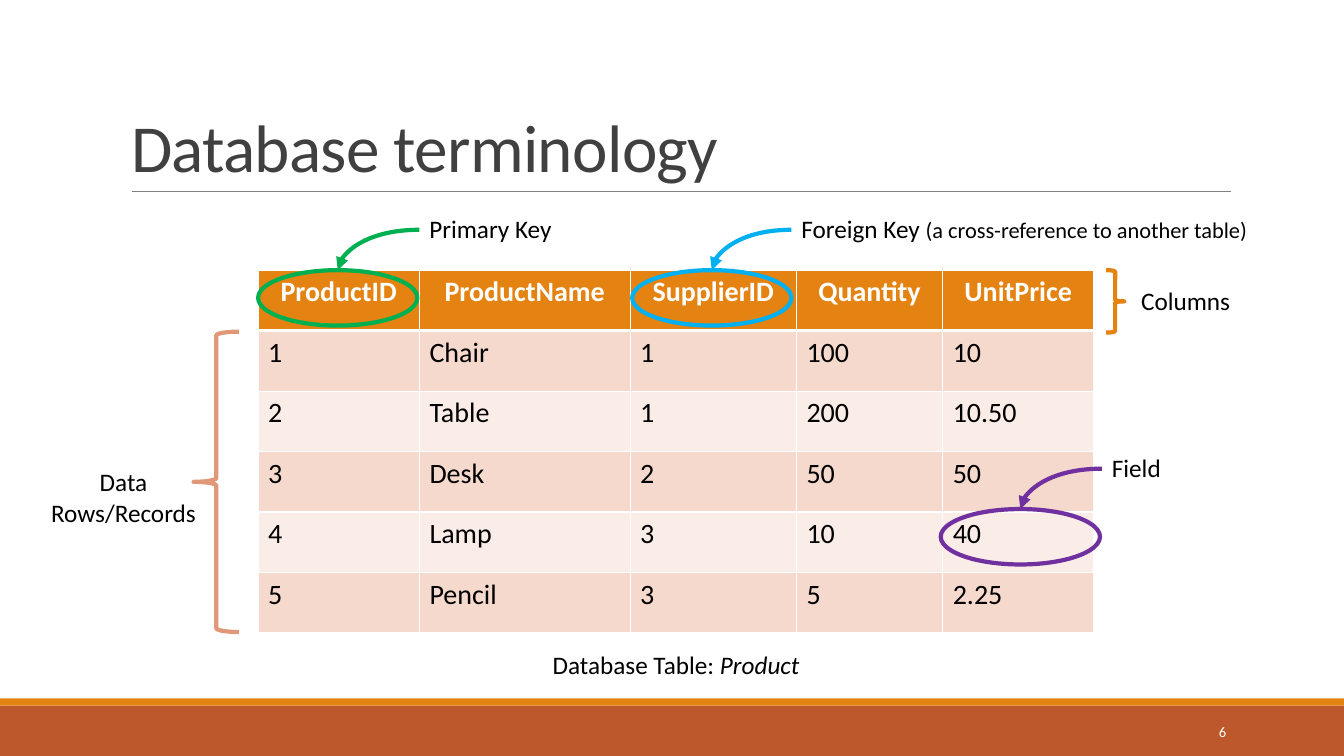
"""Builds the slide "Database terminology" with an annotated database table."""
from lxml import etree
from pptx import Presentation
from pptx.dml.color import RGBColor
from pptx.enum.shapes import MSO_CONNECTOR, MSO_SHAPE
from pptx.enum.text import MSO_ANCHOR, MSO_AUTO_SIZE, PP_ALIGN
from pptx.oxml.ns import qn
from pptx.util import Inches, Pt

RECT, OVAL = MSO_SHAPE.RECTANGLE, MSO_SHAPE.OVAL
LEFT_BRACE, RIGHT_BRACE = MSO_SHAPE.LEFT_BRACE, MSO_SHAPE.RIGHT_BRACE
STRAIGHT, CURVE = MSO_CONNECTOR.STRAIGHT, MSO_CONNECTOR.CURVE
LEFT, CENTER, RIGHT = PP_ALIGN.LEFT, PP_ALIGN.CENTER, PP_ALIGN.RIGHT
MIDDLE, BOTTOM = MSO_ANCHOR.MIDDLE, MSO_ANCHOR.BOTTOM
NO_AUTOFIT = MSO_AUTO_SIZE.NONE

FONT = "Calibri"
WHITE = RGBColor(0xFF, 0xFF, 0xFF)
BLACK = RGBColor(0x00, 0x00, 0x00)
DARK_GREY = RGBColor(0x40, 0x40, 0x40)
GREY = RGBColor(0x80, 0x80, 0x80)
RUST = RGBColor(0xBD, 0x58, 0x2C)
ORANGE = RGBColor(0xE4, 0x83, 0x12)
SALMON = RGBColor(0xE0, 0x98, 0x78)
BAND_DARK = RGBColor(0xF5, 0xD9, 0xCC)
BAND_LIGHT = RGBColor(0xFA, 0xED, 0xE7)
GREEN = RGBColor(0x00, 0xB0, 0x50)
BLUE = RGBColor(0x00, 0xB0, 0xF0)
PURPLE = RGBColor(0x70, 0x30, 0xA0)


def add_label(left, top, width, height, text, size=18, color=BLACK, align=LEFT):
    sp = s.shapes.add_textbox(Inches(left), Inches(top), Inches(width), Inches(height))
    tf = sp.text_frame
    tf.word_wrap = True
    p = tf.paragraphs[0]
    p.text = text
    p.alignment = align
    p.font.name, p.font.size, p.font.color.rgb = FONT, Pt(size), color
    return tf


def add_line(kind, x1, y1, x2, y2, color, width):
    c = s.shapes.add_connector(kind, Inches(x1), Inches(y1), Inches(x2), Inches(y2))
    c.line.color.rgb, c.line.width = color, Pt(width)
    etree.SubElement(c._element.spPr, qn("a:effectLst"))
    return c


prs = Presentation()
prs.slide_width, prs.slide_height = Inches(13.33), Inches(7.5)
s = prs.slides.add_slide(prs.slide_layouts[5])

for top, height, color in [(7, 0.5, RUST), (6.93, 0.07, ORANGE)]:
    sp = s.shapes.add_shape(RECT, 0, Inches(top), prs.slide_width, Inches(height))
    sp.shadow.inherit = False
    sp.fill.solid()
    sp.fill.fore_color.rgb = color
    sp.line.fill.background()
add_line(STRAIGHT, 1.31, 1.9, 12.21, 1.9, GREY, 0.5)

title = s.shapes.title
title.left, title.top, title.width, title.height = Inches(1.2), Inches(0.31), Inches(11), Inches(1.59)
tf = title.text_frame
tf.text = "Database terminology"
tf.auto_size, tf.vertical_anchor = NO_AUTOFIT, BOTTOM
p = tf.paragraphs[0]
p.alignment, p.line_spacing = LEFT, 0.85
r = p.runs[0]
r.font.name, r.font.size, r.font.color.rgb = FONT, Pt(48), DARK_GREY
r.font._element.set("spc", "-50")

rows = [
    ["ProductID", "ProductName", "SupplierID", "Quantity", "UnitPrice"],
    ["1", "Chair", "1", "100", "10"],
    ["2", "Table", "1", "200", "10.50"],
    ["3", "Desk", "2", "50", "50"],
    ["4", "Lamp", "3", "10", "40"],
    ["5", "Pencil", "3", "5", "2.25"],
]
table = s.shapes.add_table(6, 5, Inches(2.56), Inches(2.68), Inches(8.29), Inches(3.6)).table
for column, width in zip(table.columns, [1.6, 2.09, 1.65, 1.45, 1.5]):
    column.width = Inches(width)
for i, row in enumerate(rows):
    table.rows[i].height = Inches(0.6)
    header = i == 0
    for j, text in enumerate(row):
        cell = table.cell(i, j)
        tcPr = cell._tc.get_or_add_tcPr()
        for side in ("lnL", "lnR", "lnT", "lnB"):
            thick = (i, side) in [(0, "lnB"), (1, "lnT")]
            ln = etree.SubElement(tcPr, qn("a:" + side), w=str(Pt(3 if thick else 1)))
            fill = etree.SubElement(ln, qn("a:solidFill"))
            etree.SubElement(fill, qn("a:srgbClr"), val=str(WHITE))
        cell.fill.solid()
        cell.fill.fore_color.rgb = ORANGE if header else BAND_DARK if i % 2 else BAND_LIGHT
        cell.text = text
        p = cell.text_frame.paragraphs[0]
        p.alignment = CENTER if header else LEFT
        r = p.runs[0]
        r.font.name, r.font.size, r.font.bold = FONT, Pt(20), header
        r.font.color.rgb = WHITE if header else BLACK

callouts = [
    (2.56, 2.68, GREEN, "Primary Key", 4.16, 1.44),
    (6.27, 2.68, BLUE, "Foreign Key ", 7.85, 5.12),
    (9.33, 5.05, PURPLE, "Field", 10.93, 1.44),
]
for left, top, color, text, label_left, label_width in callouts:
    sp = s.shapes.add_shape(OVAL, Inches(left), Inches(top), Inches(1.58), Inches(0.55))
    sp.shadow.inherit = False
    sp.fill.background()
    sp.line.color.rgb, sp.line.width = color, Pt(3)
    tf = add_label(label_left, top - 0.61, label_width, 0.4, text)
    if color == BLUE:
        r = tf.paragraphs[0].add_run()
        r.text = "(a cross-reference to another table)"
        r.font.size = Pt(16)
    c = add_line(CURVE, label_left, top - 0.4, left + 0.79, top, color, 3)
    c._element.spPr.find(qn("a:prstGeom")).set("prst", "curvedConnector2")
    etree.SubElement(c.line._get_or_add_ln(), qn("a:tailEnd"), type="triangle")

braces = [
    (LEFT_BRACE, 1.92, 3.29, 0.45, 2.98, SALMON),
    (RIGHT_BRACE, 10.97, 2.68, 0.18, 0.62, ORANGE),
]
for shape, left, top, width, height, color in braces:
    sp = s.shapes.add_shape(shape, Inches(left), Inches(top), Inches(width), Inches(height))
    sp.shadow.inherit = False
    sp.fill.background()
    sp.line.color.rgb, sp.line.width = color, Pt(3)

add_label(0.39, 4.58, 1.67, 0.71, "Data Rows/Records", align=CENTER)
add_label(11.22, 2.78, 1.74, 0.4, "Columns")
tf = add_label(2.56, 6.39, 8.29, 0.4, "Database Table: ", align=CENTER)
r = tf.paragraphs[0].add_run()
r.text = "Product"
r.font.italic = True
tf = add_label(10.83, 7.06, 1.43, 0.4, "6", 10.5, WHITE, RIGHT)
tf.vertical_anchor = MIDDLE

prs.save("out.pptx")
